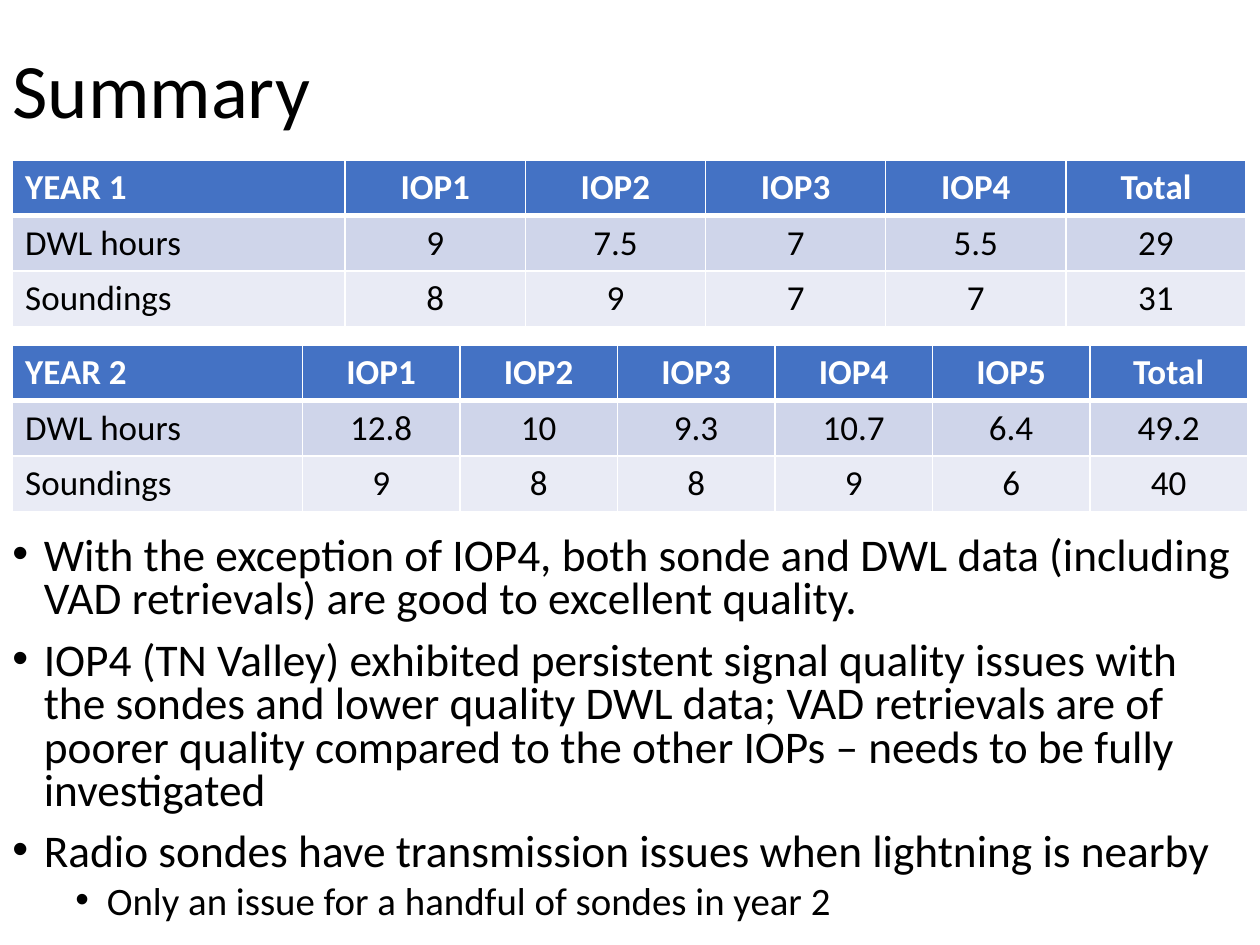
from dataclasses import dataclass

from lxml.etree import SubElement
from pptx import Presentation
from pptx.dml.color import RGBColor
from pptx.enum.text import MSO_ANCHOR as Anchor, PP_ALIGN as Align
from pptx.oxml.ns import qn
from pptx.util import Inches, Pt


@dataclass(frozen=True)
class Theme:
    font: str = "Calibri"
    ink: str = "000000"
    white: str = "FFFFFF"
    header: str = "4472C4"
    bands: tuple = ("CFD5EA", "E9EBF5")
    title_size: float = 44
    table_size: float = 20
    bullet_sizes: tuple = (25.9, 22.2)
    bullet_gaps: tuple = (10, 5)
    thin: float = 1
    thick: float = 3


@dataclass(frozen=True)
class YearTable:
    top: float
    label_width: float
    value_width: float
    rows: tuple


@dataclass(frozen=True)
class Bullet:
    text: str
    level: int = 0


THEME = Theme()
TABLE_LEFT, ROW_HEIGHT = 0.1, 0.44

YEAR_1 = YearTable(1.27, 2.64, 1.43, (
    ("YEAR 1", "IOP1", "IOP2", "IOP3", "IOP4", "Total"),
    ("DWL hours", "9", "7.5", "7", "5.5", "29"),
    ("Soundings", "8", "9", "7", "7", "31"),
))
YEAR_2 = YearTable(2.74, 2.3, 1.25, (
    ("YEAR 2", "IOP1", "IOP2", "IOP3", "IOP4", "IOP5", "Total"),
    ("DWL hours", "12.8", "10", "9.3", "10.7", "6.4", "49.2"),
    ("Soundings", "9", "8", "8", "9", "6", "40"),
))
FINDINGS = (
    Bullet("With the exception of IOP4, both sonde and DWL data (including VAD "
           "retrievals) are good to excellent quality."),
    Bullet("IOP4 (TN Valley) exhibited persistent signal quality issues with the "
           "sondes and lower quality DWL data; VAD retrievals are of poorer quality "
           "compared to the other IOPs – needs to be fully investigated"),
    Bullet("Radio sondes have transmission issues when lightning is nearby"),
    Bullet("Only an issue for a handful of sondes in year 2", level=1),
)


def write(paragraph, text: str, *, size: float, color: str = THEME.ink,
          bold: bool = False, align=Align.LEFT, spacing: float = 1.0,
          before: float = 0) -> None:
    paragraph.alignment = align
    paragraph.line_spacing = spacing
    paragraph.space_before = Pt(before)
    run = paragraph.add_run()
    run.text = text
    run.font.name = THEME.font
    run.font.size = Pt(size)
    run.font.bold = bold
    run.font.color.rgb = RGBColor.from_string(color)


def add_text_frame(slide, left: float, top: float, width: float, height: float,
                   anchor=Anchor.TOP):
    frame = slide.shapes.add_textbox(
        Inches(left), Inches(top), Inches(width), Inches(height)).text_frame
    frame.word_wrap = True
    frame.vertical_anchor = anchor
    return frame


def set_bullet(paragraph, level: int) -> None:
    properties = paragraph._p.get_or_add_pPr()
    properties.set("marL", str(Inches(0.25 + 0.5 * level)))
    properties.set("indent", str(Inches(-0.25)))
    SubElement(properties, qn("a:buFont"), typeface="Arial")
    SubElement(properties, qn("a:buChar"), char="•")


def set_borders(cell, top: float, bottom: float) -> None:
    properties = cell._tc.get_or_add_tcPr()
    widths = {"L": THEME.thin, "R": THEME.thin, "T": top, "B": bottom}
    for side, width in widths.items():
        line = SubElement(properties, qn(f"a:ln{side}"), w=str(Pt(width)))
        fill = SubElement(line, qn("a:solidFill"))
        SubElement(fill, qn("a:srgbClr"), val=THEME.white)


def add_year_table(slide, year: YearTable) -> None:
    row_count, column_count = len(year.rows), len(year.rows[0])
    widths = [year.label_width] + [year.value_width] * (column_count - 1)
    table = slide.shapes.add_table(
        row_count, column_count, Inches(TABLE_LEFT), Inches(year.top),
        Inches(sum(widths)), Inches(ROW_HEIGHT * row_count)).table
    for column, width in zip(table.columns, widths):
        column.width = Inches(width)
    for r, values in enumerate(year.rows):
        table.rows[r].height = Inches(ROW_HEIGHT)
        is_header = r == 0
        background = THEME.header if is_header else THEME.bands[(r - 1) % 2]
        for c, value in enumerate(values):
            cell = table.cell(r, c)
            # The rule under the header is shared with the row below it
            set_borders(cell, top=THEME.thick if r == 1 else THEME.thin,
                        bottom=THEME.thick if is_header else THEME.thin)
            cell.fill.solid()
            cell.fill.fore_color.rgb = RGBColor.from_string(background)
            write(cell.text_frame.paragraphs[0], value, size=THEME.table_size,
                  color=THEME.white if is_header else THEME.ink, bold=is_header,
                  align=Align.CENTER if c else Align.LEFT)


def add_findings(slide, findings: tuple) -> None:
    frame = add_text_frame(slide, 0, 4.21, 10, 3.27)
    for i, finding in enumerate(findings):
        paragraph = frame.add_paragraph() if i else frame.paragraphs[0]
        paragraph.level = finding.level
        write(paragraph, finding.text, size=THEME.bullet_sizes[finding.level],
              spacing=0.8, before=THEME.bullet_gaps[finding.level])
        set_bullet(paragraph, finding.level)


def main() -> None:
    deck = Presentation()
    deck.slide_width, deck.slide_height = Inches(10), Inches(7.5)
    slide = deck.slides.add_slide(deck.slide_layouts[6])

    # Title
    title = add_text_frame(slide, 0, 0.02, 8.62, 1.45, Anchor.MIDDLE)
    write(title.paragraphs[0], "Summary", size=THEME.title_size, spacing=0.9)

    # Yearly totals and findings
    add_year_table(slide, YEAR_1)
    add_findings(slide, FINDINGS)
    add_year_table(slide, YEAR_2)

    deck.save("out.pptx")


if __name__ == "__main__":
    main()
